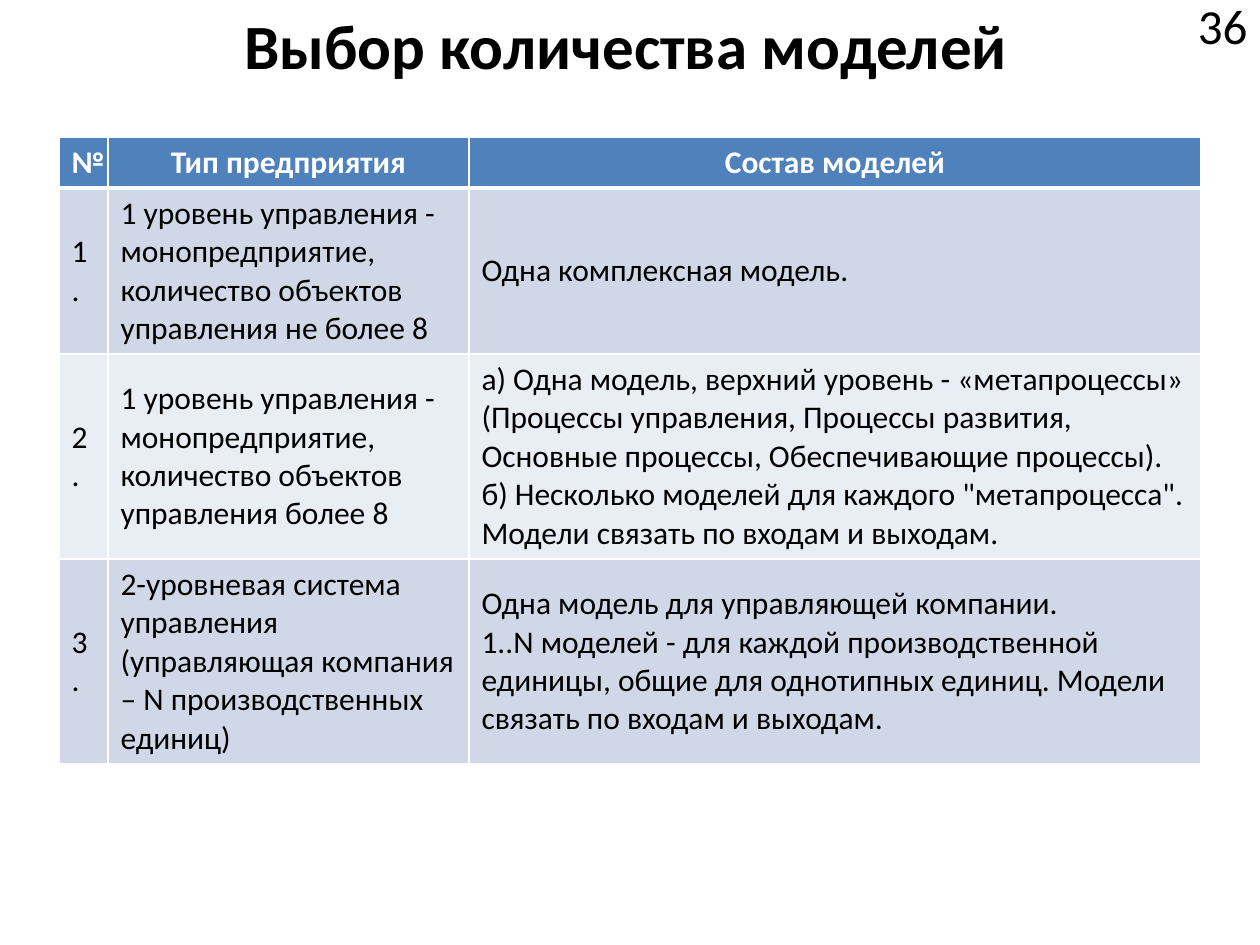
import pptx
import pptx.dml.color
import pptx.enum.text
import pptx.oxml
import pptx.oxml.ns
import pptx.util

RGBColor = pptx.dml.color.RGBColor
Align = pptx.enum.text.PP_ALIGN
Anchor = pptx.enum.text.MSO_ANCHOR

BLACK = RGBColor(0x00, 0x00, 0x00)
WHITE = RGBColor(0xFF, 0xFF, 0xFF)
HEADER_BLUE = RGBColor(0x4F, 0x81, 0xBD)
BANDS = (RGBColor(0xD0, 0xD8, 0xE8), RGBColor(0xE9, 0xED, 0xF4))

FONT = "Calibri"
PX_PER_INCH = 126
THIN, THICK = 1, 3

COLUMN_WIDTHS = (49, 361, 732)
ROW_HEIGHTS = (51, 166, 205, 205)
ROWS = (
    ("№", "Тип предприятия", "Состав моделей"),
    ("1.",
     "1 уровень управления - монопредприятие, количество объектов "
     "управления не более 8",
     "Одна комплексная модель."),
    ("2.",
     "1 уровень управления - монопредприятие, количество объектов "
     "управления более 8",
     "а) Одна модель, верхний уровень - «метапроцессы» (Процессы управления, "
     "Процессы развития, Основные процессы, Обеспечивающие процессы). \n"
     "б) Несколько моделей для каждого \"метапроцесса\". "
     "Модели связать по входам и выходам."),
    ("3.",
     "2-уровневая система управления (управляющая компания – "
     "N производственных единиц)",
     "Одна модель для управляющей компании. \n"
     "1..N моделей - для каждой производственной единицы, общие для "
     "однотипных единиц. Модели связать по входам и выходам."),
)


def px(length):
    return pptx.util.Emu(round(length * pptx.util.Inches(1) / PX_PER_INCH))


def write_text(text_frame, text, size=18, color=BLACK, bold=False,
               align=Align.LEFT):
    """Fill one paragraph; a newline becomes a line break."""
    text_frame.word_wrap = True
    paragraph = text_frame.paragraphs[0]
    paragraph.text = text.replace("\n", "\v")
    paragraph.alignment = align
    for run in paragraph.runs:
        run.font.name = FONT
        run.font.size = pptx.util.Pt(size)
        run.font.bold = bold
        run.font.color.rgb = color


class SlideBuilder:
    def __init__(self, slide, border_color=WHITE):
        self.slide = slide
        self.border_color = border_color

    def text_box(self, text, left, top, width, height, anchor=Anchor.TOP,
                 **text_format):
        shape = self.slide.shapes.add_textbox(
            px(left), px(top), px(width), px(height))
        shape.text_frame.vertical_anchor = anchor
        write_text(shape.text_frame, text, **text_format)

    def cell_borders(self, cell, top, bottom):
        properties = cell._tc.get_or_add_tcPr()
        namespace = pptx.oxml.ns.nsdecls("a")
        for side, points in zip("LRTB", (THIN, THIN, top, bottom)):
            properties.append(pptx.oxml.parse_xml(
                f'<a:ln{side} {namespace} w="{pptx.util.Pt(points)}">'
                f'<a:solidFill><a:srgbClr val="{self.border_color}"/>'
                f'</a:solidFill></a:ln{side}>'))

    def table(self, rows, left, top, column_widths, row_heights):
        table = self.slide.shapes.add_table(
            len(rows), len(column_widths), px(left), px(top),
            px(sum(column_widths)), px(sum(row_heights))).table
        for column, width in zip(table.columns, column_widths):
            column.width = px(width)
        for row, height in zip(table.rows, row_heights):
            row.height = px(height)

        for row_index, texts in enumerate(rows):
            header = row_index == 0
            fill = HEADER_BLUE if header else BANDS[(row_index - 1) % 2]
            for column_index, text in enumerate(texts):
                cell = table.cell(row_index, column_index)
                cell.vertical_anchor = Anchor.MIDDLE
                # The rule under the header is thicker than the others
                self.cell_borders(cell,
                                  top=THICK if row_index == 1 else THIN,
                                  bottom=THICK if header else THIN)
                cell.fill.solid()
                cell.fill.fore_color.rgb = fill
                write_text(cell.text_frame, text, bold=header,
                           color=WHITE if header else BLACK,
                           align=Align.CENTER if header else Align.LEFT)


def main():
    presentation = pptx.Presentation()
    presentation.slide_width = px(1260)
    presentation.slide_height = px(945)
    builder = SlideBuilder(
        presentation.slides.add_slide(presentation.slide_layouts[6]))

    # Title and slide number
    builder.text_box("Выбор количества моделей", 59, 0, 1134, 118,
                     size=36, bold=True, align=Align.CENTER)
    builder.text_box("36", 1131, 0, 129, 49, anchor=Anchor.MIDDLE,
                     size=28, align=Align.RIGHT)

    # Models by type of enterprise
    builder.table(ROWS, 59, 137, COLUMN_WIDTHS, ROW_HEIGHTS)

    presentation.save("out.pptx")


if __name__ == "__main__":
    main()
